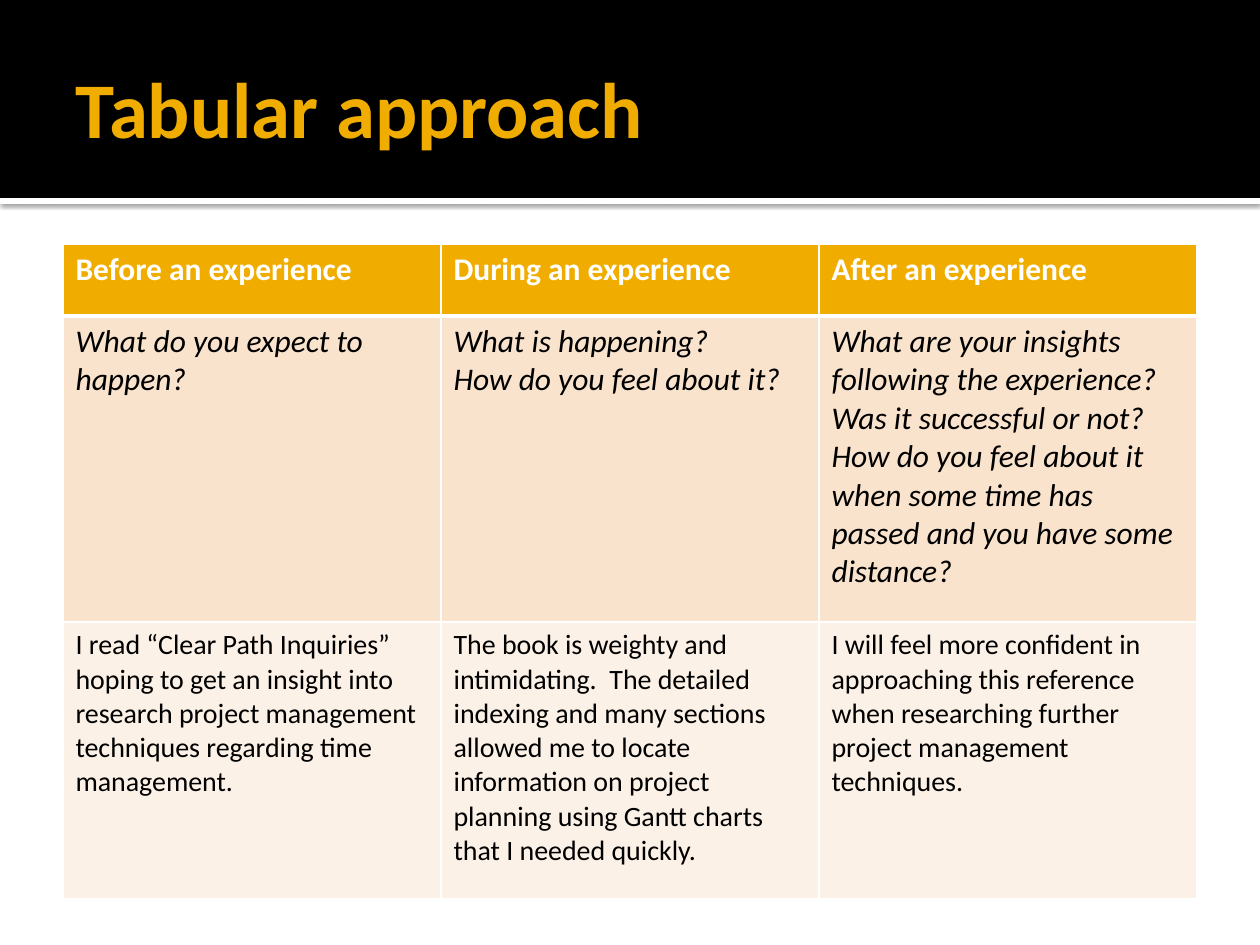
from dataclasses import dataclass

from lxml import etree
from pptx import Presentation
from pptx.dml.color import RGBColor
from pptx.enum.shapes import MSO_SHAPE
from pptx.enum.text import MSO_ANCHOR, MSO_AUTO_SIZE, PP_ALIGN
from pptx.oxml.ns import qn
from pptx.util import Emu, Pt

RECTANGLE = MSO_SHAPE.RECTANGLE
MIDDLE = MSO_ANCHOR.MIDDLE
LEFT = PP_ALIGN.LEFT
NO_AUTOFIT = MSO_AUTO_SIZE.NONE

EMU_PER_PX = 914400 / 126
SLIDE_WIDTH, SLIDE_HEIGHT = 1260, 945
BAND_HEIGHT, STRIPE_HEIGHT = 198, 6
MARGIN = 63
TABLE_TOP = 244
COLUMN_WIDTH = 378
TITLE_ONLY_LAYOUT = 5
FONT = "Calibri"
COLORS = {
    "white": "FFFFFF",
    "black": "000000",
    "amber": "F0AD00",
    "peach": "F9E3CC",
    "cream": "FCF1E7",
}


@dataclass(frozen=True)
class TableRow:
    height: int
    fill: str
    texts: tuple[str, ...]
    size: int
    color: str = "black"
    bold: bool = False
    italic: bool = False
    top_border: int = 1
    bottom_border: int = 1


ROWS = (
    TableRow(
        72, "amber",
        ("Before an experience", "During an experience", "After an experience"),
        size=18, color="white", bold=True, bottom_border=3,
    ),
    TableRow(
        306, "peach",
        (
            "What do you expect to happen?",
            "What is happening?\nHow do you feel about it?",
            "What are your insights following the experience?\n"
            "Was it successful or not?\n"
            "How do you feel about it when some time has passed "
            "and you have some distance?",
        ),
        size=18, italic=True, top_border=3,
    ),
    TableRow(
        277, "cream",
        (
            "I read “Clear Path Inquiries” hoping to get an insight into research "
            "project management techniques regarding time management.",
            "The book is weighty and intimidating.  The detailed indexing and many "
            "sections allowed me to locate information on project planning using "
            "Gantt charts that I needed quickly.",
            "I will feel more confident in approaching this reference when "
            "researching further project management techniques.",
        ),
        size=16,
    ),
)


def px(length: int) -> Emu:
    return Emu(round(length * EMU_PER_PX))


def rgb(name: str) -> RGBColor:
    return RGBColor.from_string(COLORS[name])


def write_text(text_frame, text: str, *, size: int, color: str,
               bold: bool = False, italic: bool = False) -> None:
    text_frame.text = text
    for paragraph in text_frame.paragraphs:
        paragraph.alignment = LEFT
        for run in paragraph.runs:
            font = run.font
            font.name, font.size = FONT, Pt(size)
            font.bold, font.italic = bold, italic
            font.color.rgb = rgb(color)


def add_band(slide, top: int, height: int, color: str):
    shape = slide.shapes.add_shape(
        RECTANGLE, 0, px(top), px(SLIDE_WIDTH), px(height))
    shape.shadow.inherit = False
    shape.fill.solid()
    shape.fill.fore_color.rgb = rgb(color)
    shape.line.fill.background()
    return shape


def add_shadow(shape, blur: float, distance: float, opacity: int) -> None:
    effects = shape._element.spPr.find(qn("a:effectLst"))
    shadow = etree.SubElement(
        effects, qn("a:outerShdw"), blurRad=str(Pt(blur)),
        dist=str(Pt(distance)), dir="5400000", algn="t", rotWithShape="0")
    color = etree.SubElement(shadow, qn("a:srgbClr"), val=COLORS["black"])
    etree.SubElement(color, qn("a:alpha"), val=str(opacity * 1000))


def set_borders(cell, row: TableRow) -> None:
    widths = {"lnL": 1, "lnR": 1, "lnT": row.top_border, "lnB": row.bottom_border}
    properties = cell._tc.get_or_add_tcPr()
    for position, (side, width) in enumerate(widths.items()):
        line = etree.Element(qn(f"a:{side}"), w=str(Pt(width)))
        fill = etree.SubElement(line, qn("a:solidFill"))
        etree.SubElement(fill, qn("a:srgbClr"), val=COLORS["white"])
        properties.insert(position, line)


def place_title(slide, text: str) -> None:
    title = slide.shapes.title
    title.left, title.top = px(MARGIN), px(21)
    title.width, title.height = px(SLIDE_WIDTH - 2 * MARGIN), px(173)
    frame = title.text_frame
    frame.auto_size = NO_AUTOFIT
    frame.word_wrap = True
    frame.vertical_anchor = MIDDLE
    frame.margin_left = px(13)
    frame.margin_top = frame.margin_right = frame.margin_bottom = px(6)
    write_text(frame, text, size=45, color="amber", bold=True)
    slide.shapes._spTree.append(title._element)


def add_experience_table(slide, rows: tuple[TableRow, ...]) -> None:
    column_count = len(rows[0].texts)
    table = slide.shapes.add_table(
        len(rows), column_count, px(MARGIN), px(TABLE_TOP),
        px(COLUMN_WIDTH * column_count), px(sum(row.height for row in rows))).table
    for column in table.columns:
        column.width = px(COLUMN_WIDTH)
    for row_index, row in enumerate(rows):
        table.rows[row_index].height = px(row.height)
        for column_index, text in enumerate(row.texts):
            cell = table.cell(row_index, column_index)
            cell.fill.solid()
            cell.fill.fore_color.rgb = rgb(row.fill)
            set_borders(cell, row)
            write_text(cell.text_frame, text, size=row.size, color=row.color,
                       bold=row.bold, italic=row.italic)


def main() -> None:
    presentation = Presentation()
    presentation.slide_width = px(SLIDE_WIDTH)
    presentation.slide_height = px(SLIDE_HEIGHT)
    slide = presentation.slides.add_slide(
        presentation.slide_layouts[TITLE_ONLY_LAYOUT])
    stripe = add_band(slide, BAND_HEIGHT, STRIPE_HEIGHT, "white")
    add_shadow(stripe, blur=2.5, distance=0.8, opacity=60)
    add_band(slide, 0, BAND_HEIGHT, "black")
    place_title(slide, "Tabular approach")
    add_experience_table(slide, ROWS)
    presentation.save("out.pptx")


if __name__ == "__main__":
    main()
